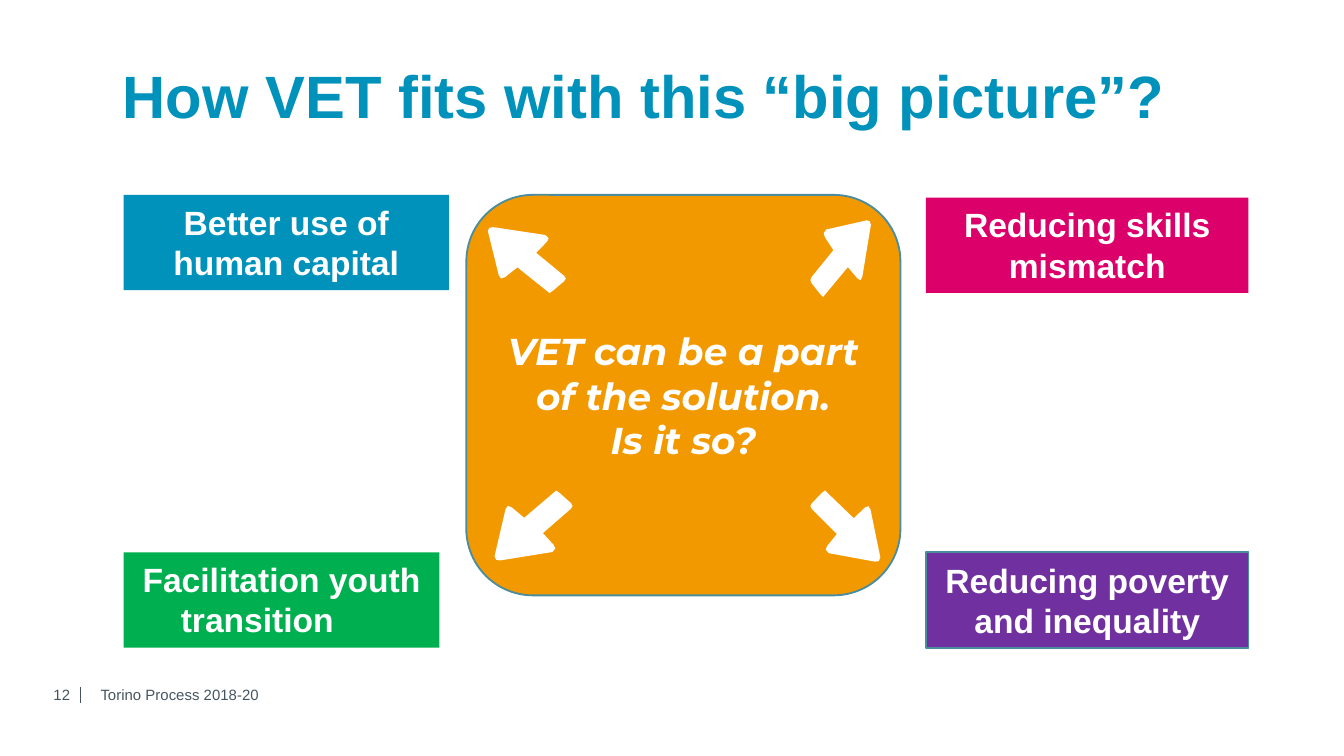
"""Build the slide on how VET fits with the big picture."""
from typing import NamedTuple, Optional

from lxml.etree import SubElement
from pptx import Presentation
from pptx.dml.color import RGBColor
from pptx.enum.shapes import MSO_CONNECTOR as Connector, MSO_SHAPE as Preset
from pptx.enum.text import MSO_ANCHOR as Anchor, PP_ALIGN as Align
from pptx.oxml.ns import qn
from pptx.util import Inches, Pt

WHITE, BLUE, GREY, TEAL = "FFFFFF", "0092BB", "455560", "4B8D9E"
ARROW_OUTLINE = [
    (0.62, 0.39), (0.76, 0.22), (0.78, 0.17), (0.74, 0.12), (0.07, 0), (0.02, 0.01),
    (0, 0.06), (0.14, 0.73), (0.17, 0.78), (0.22, 0.76), (0.38, 0.61), (0.76, 0.97),
    (0.79, 1), (0.83, 0.97), (0.98, 0.82), (1, 0.78), (0.98, 0.74),
]


class Box(NamedTuple):
    left: float
    top: float
    width: float
    height: float

    def lengths(self) -> list:
        return [Inches(value) for value in self]


class Goal(NamedTuple):
    text: str
    box: Box
    fill: str
    line: Optional[str] = None
    anchor: Anchor = Anchor.TOP


class Arrow(NamedTuple):
    box: Box
    flip_x: bool
    flip_y: bool


GOALS = [
    Goal("Reducing skills mismatch", Box(6.89, 1.47, 2.4, 0.71), "DC006B"),
    Goal("Better use of human capital", Box(0.92, 1.45, 2.42, 0.71), BLUE),
    Goal("Facilitation youth transition\t", Box(0.92, 4.11, 2.35, 0.71), "00B050"),
    Goal("Reducing poverty and inequality", Box(6.89, 4.11, 2.4, 0.71), "7030A0",
         TEAL, Anchor.MIDDLE),
]
ARROWS = [
    Arrow(Box(3.63, 1.69, 0.58, 0.49), False, False),
    Arrow(Box(3.68, 3.65, 0.58, 0.52), False, True),
    Arrow(Box(6.03, 3.65, 0.52, 0.53), True, True),
    Arrow(Box(6.03, 1.64, 0.45, 0.57), True, False),
]


def color(value: str) -> RGBColor:
    return RGBColor.from_string(value)


def write(shape, text: str, *, size: float, fill: str = WHITE, font: str = "Arial",
          bold: bool = False, italic: bool = False, align: Align = Align.CENTER,
          anchor: Anchor = Anchor.MIDDLE, spacing: float = 1.0) -> None:
    frame = shape.text_frame
    frame.word_wrap = True
    frame.vertical_anchor = anchor
    for index, line in enumerate(text.split("\n")):
        paragraph = frame.add_paragraph() if index else frame.paragraphs[0]
        paragraph.alignment = align
        paragraph.line_spacing = spacing
        run = paragraph.add_run()
        run.text = line
        run.font.name, run.font.size = font, Pt(size)
        run.font.bold, run.font.italic = bold, italic
        run.font.color.rgb = color(fill)


def paint(shape, fill: str, line: Optional[str] = None) -> None:
    shape.shadow.inherit = False
    shape.fill.solid()
    shape.fill.fore_color.rgb = color(fill)
    if line:
        shape.line.color.rgb = color(line)
        shape.line.width = Pt(1)
    else:
        shape.line.fill.background()


def add_panel(slide, preset: Preset, box: Box, fill: str, line: Optional[str] = None):
    shape = slide.shapes.add_shape(preset, *box.lengths())
    paint(shape, fill, line)
    return shape


def add_text(slide, box: Box, text: str, **style) -> None:
    write(slide.shapes.add_textbox(*box.lengths()), text, **style)


def add_arrow(slide, arrow: Arrow) -> None:
    box = arrow.box
    points = [
        (Inches(box.left + box.width * (1 - x if arrow.flip_x else x)),
         Inches(box.top + box.height * (1 - y if arrow.flip_y else y)))
        for x, y in ARROW_OUTLINE
    ]
    builder = slide.shapes.build_freeform(*points[0])
    builder.add_line_segments(points[1:], close=True)
    paint(builder.convert_to_shape(), WHITE)


def add_divider(slide, x: float, top: float, bottom: float) -> None:
    divider = slide.shapes.add_connector(
        Connector.STRAIGHT, Inches(x), Inches(top), Inches(x), Inches(bottom))
    divider.line.color.rgb = color(GREY)
    divider.line.width = Pt(0.25)
    SubElement(divider.element.spPr, qn("a:effectLst"))


def main() -> None:
    presentation = Presentation()
    presentation.slide_width = Inches(10)
    presentation.slide_height = Inches(10 * 9 / 16)
    slide = presentation.slides.add_slide(presentation.slide_layouts[6])

    add_divider(slide, 0.6, 5.11, 5.23)
    add_text(slide, Box(0.65, 5.06, 1.73, 0.21), "Torino Process 2018-20",
             size=8, fill=GREY, align=Align.LEFT)
    add_text(slide, Box(0.3, 5.06, 0.43, 0.21), "12", size=8, fill=GREY, align=Align.LEFT)
    add_text(slide, Box(0.3, 0.45, 8.99, 0.73), "How VET fits with this “big picture”?",
             size=32, fill=BLUE, bold=True, anchor=Anchor.TOP, spacing=0.9)

    center = add_panel(slide, Preset.ROUNDED_RECTANGLE, Box(3.47, 1.45, 3.23, 2.98),
                       "F39900", TEAL)
    write(center, "VET can be a part of the solution.\nIs it so?",
          size=20, font="Montserrat", bold=True, italic=True)
    for goal in GOALS:
        panel = add_panel(slide, Preset.RECTANGLE, goal.box, goal.fill, goal.line)
        write(panel, goal.text, size=18, bold=True, anchor=goal.anchor)
    for arrow in ARROWS:
        add_arrow(slide, arrow)

    presentation.save("out.pptx")


if __name__ == "__main__":
    main()
